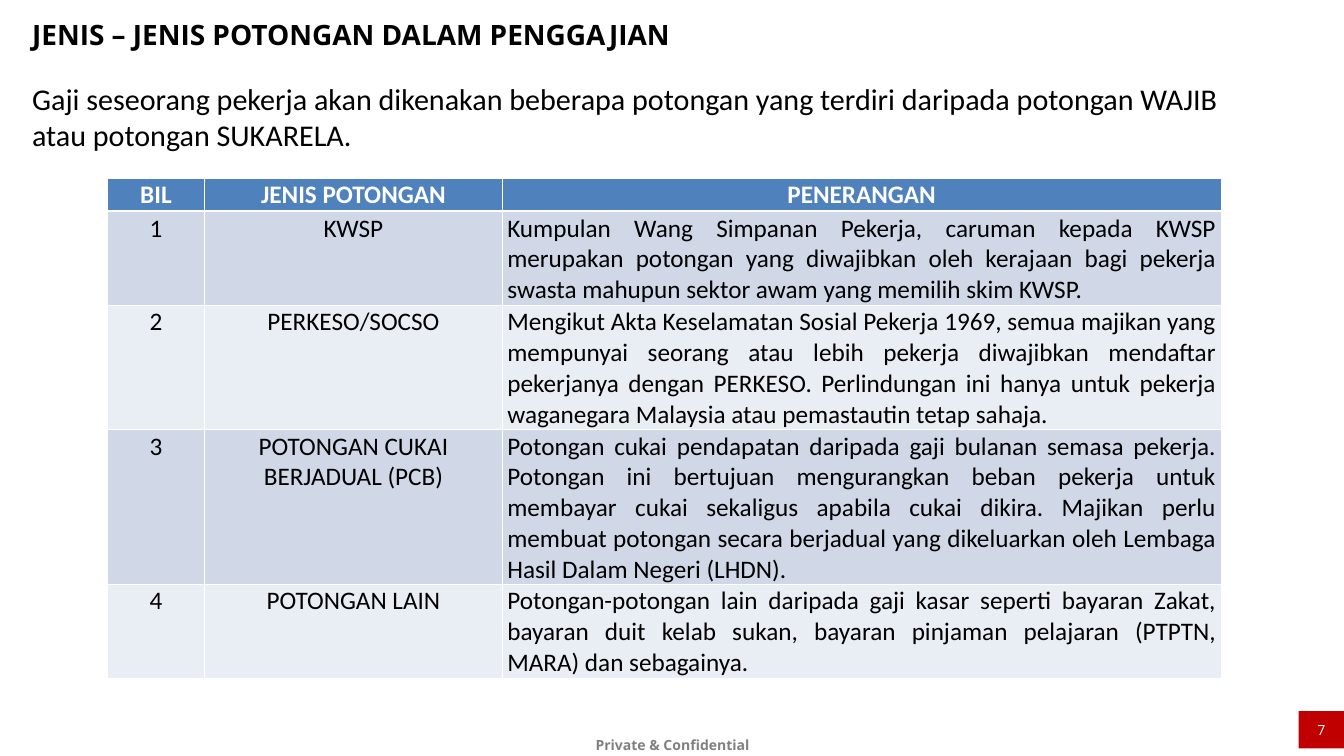
"""Build a slide on the kinds of payroll deductions."""
from dataclasses import dataclass

from lxml.etree import SubElement
from pptx import Presentation
from pptx.dml.color import RGBColor
from pptx.enum.shapes import MSO_SHAPE
from pptx.enum.text import MSO_ANCHOR, PP_ALIGN
from pptx.oxml.ns import qn
from pptx.util import Cm, Pt

BLACK, WHITE, GREY, RED = "000000", "FFFFFF", "808080", "C00000"
HEADER_FILL, BAND_FILLS = "4F81BD", ("D0D8E8", "E9EDF4")
COLUMN_WIDTHS = (4.9, 15.01, 36.22)
ROW_HEIGHT = 1.04


@dataclass(frozen=True)
class TextStyle:
    size: float
    name: str = "Calibri"
    color: str = BLACK
    bold: bool = False
    alignment: PP_ALIGN = PP_ALIGN.LEFT
    line_spacing: float = 1.0


@dataclass(frozen=True)
class Box:
    left: float
    top: float
    width: float
    height: float

    def lengths(self) -> tuple:
        return Cm(self.left), Cm(self.top), Cm(self.width), Cm(self.height)


@dataclass(frozen=True)
class Deduction:
    kind: str
    explanation: str


DEDUCTIONS = (
    Deduction(
        "KWSP",
        "Kumpulan Wang Simpanan Pekerja, caruman kepada KWSP merupakan potongan yang "
        "diwajibkan oleh kerajaan bagi pekerja swasta mahupun sektor awam yang memilih "
        "skim KWSP.",
    ),
    Deduction(
        "PERKESO/SOCSO",
        "Mengikut Akta Keselamatan Sosial Pekerja 1969, semua majikan yang mempunyai "
        "seorang atau lebih pekerja diwajibkan mendaftar pekerjanya dengan PERKESO. "
        "Perlindungan ini hanya untuk pekerja waganegara Malaysia atau pemastautin tetap "
        "sahaja.",
    ),
    Deduction(
        "POTONGAN CUKAI BERJADUAL (PCB)",
        "Potongan cukai pendapatan daripada gaji bulanan semasa pekerja. Potongan ini "
        "bertujuan mengurangkan beban pekerja untuk membayar cukai sekaligus apabila "
        "cukai dikira. Majikan perlu membuat potongan secara berjadual yang dikeluarkan "
        "oleh Lembaga Hasil Dalam Negeri (LHDN).",
    ),
    Deduction(
        "POTONGAN LAIN",
        "Potongan-potongan lain daripada gaji kasar seperti bayaran Zakat, bayaran duit "
        "kelab sukan, bayaran pinjaman pelajaran (PTPTN, MARA) dan sebagainya.",
    ),
)


def rgb(color: str) -> RGBColor:
    return RGBColor.from_string(color)


def write(text_frame, text: str, style: TextStyle) -> None:
    text_frame.text = text
    for paragraph in text_frame.paragraphs:
        paragraph.alignment = style.alignment
        paragraph.line_spacing = style.line_spacing
        font = paragraph.font
        font.size, font.name, font.bold = Pt(style.size), style.name, style.bold
        font.color.rgb = rgb(style.color)


def set_margins(target, horizontal: float, vertical: float) -> None:
    target.margin_left = target.margin_right = Cm(horizontal)
    target.margin_top = target.margin_bottom = Cm(vertical)


def add_text(slide, box: Box, text: str, style: TextStyle, wrap: bool = True,
             margins: tuple = (0.25, 0.13)) -> None:
    text_frame = slide.shapes.add_textbox(*box.lengths()).text_frame
    text_frame.word_wrap = wrap
    set_margins(text_frame, *margins)
    write(text_frame, text, style)


def add_page_number(slide, box: Box, number: str) -> None:
    shape = slide.shapes.add_shape(MSO_SHAPE.RECTANGLE, *box.lengths())
    shape.shadow.inherit = False
    shape.fill.solid()
    shape.fill.fore_color.rgb = rgb(RED)
    shape.line.fill.background()
    text_frame = shape.text_frame
    text_frame.vertical_anchor = MSO_ANCHOR.MIDDLE
    set_margins(text_frame, 0, 0.5)
    write(text_frame, number, TextStyle(20, "Open Sans", WHITE, alignment=PP_ALIGN.CENTER))


def add_border(cell, side: str, width: float) -> None:
    properties = cell._tc.get_or_add_tcPr()
    line = SubElement(properties, qn(f"a:ln{side}"), w=str(Pt(width)))
    SubElement(SubElement(line, qn("a:solidFill")), qn("a:srgbClr"), val=WHITE)


def fill_cell(cell, text: str, row: int, justified: bool) -> None:
    is_header = row == 0
    for side in "LRTB":
        under_header = (row, side) in ((0, "B"), (1, "T"))
        add_border(cell, side, 3 if under_header else 1)
    cell.fill.solid()
    cell.fill.fore_color.rgb = rgb(HEADER_FILL if is_header else BAND_FILLS[(row - 1) % 2])
    set_margins(cell, 0.25, 0.08)
    alignment = PP_ALIGN.JUSTIFY if justified else PP_ALIGN.CENTER
    color = WHITE if is_header else BLACK
    write(cell.text_frame, text, TextStyle(36, color=color, bold=is_header, alignment=alignment))


def add_deduction_table(slide, box: Box) -> None:
    rows = [("BIL", "JENIS POTONGAN", "PENERANGAN")]
    rows += [(str(number), deduction.kind, deduction.explanation)
             for number, deduction in enumerate(DEDUCTIONS, 1)]
    frame = slide.shapes.add_table(len(rows), len(COLUMN_WIDTHS), *box.lengths())
    table = frame.table
    for column, width in zip(table.columns, COLUMN_WIDTHS):
        column.width = Cm(width)
    for row, texts in enumerate(rows):
        table.rows[row].height = Cm(ROW_HEIGHT)
        for column, text in enumerate(texts):
            fill_cell(table.cell(row, column), text, row, row > 0 and column == 2)
    frame.height = Cm(box.height)


def main() -> None:
    presentation = Presentation()
    presentation.slide_width, presentation.slide_height = Cm(67.74), Cm(38.1)
    slide = presentation.slides.add_slide(presentation.slide_layouts[6])
    add_text(slide, Box(29.29, 36.63, 9.22, 1.98), "Private & Confidential",
             TextStyle(20, "Open Sans", GREY, True, PP_ALIGN.CENTER, 1.2),
             margins=(0.61, 0.3))
    add_page_number(slide, Box(65.46, 35.84, 2.28, 1.88), "7")
    add_text(slide, Box(1.37, 0.76, 58.5, 3.18), "JENIS – JENIS POTONGAN DALAM PENGGAJIAN",
             TextStyle(40, "Open Sans", bold=True))
    add_text(slide, Box(1.37, 3.94, 60.91, 3.94),
             "Gaji seseorang pekerja akan dikenakan beberapa potongan yang terdiri daripada "
             "potongan WAJIB\natau potongan SUKARELA.", TextStyle(43), wrap=False)
    add_deduction_table(slide, Box(5.41, 8.97, 56.11, 25.65))
    presentation.save("out.pptx")


if __name__ == "__main__":
    main()
